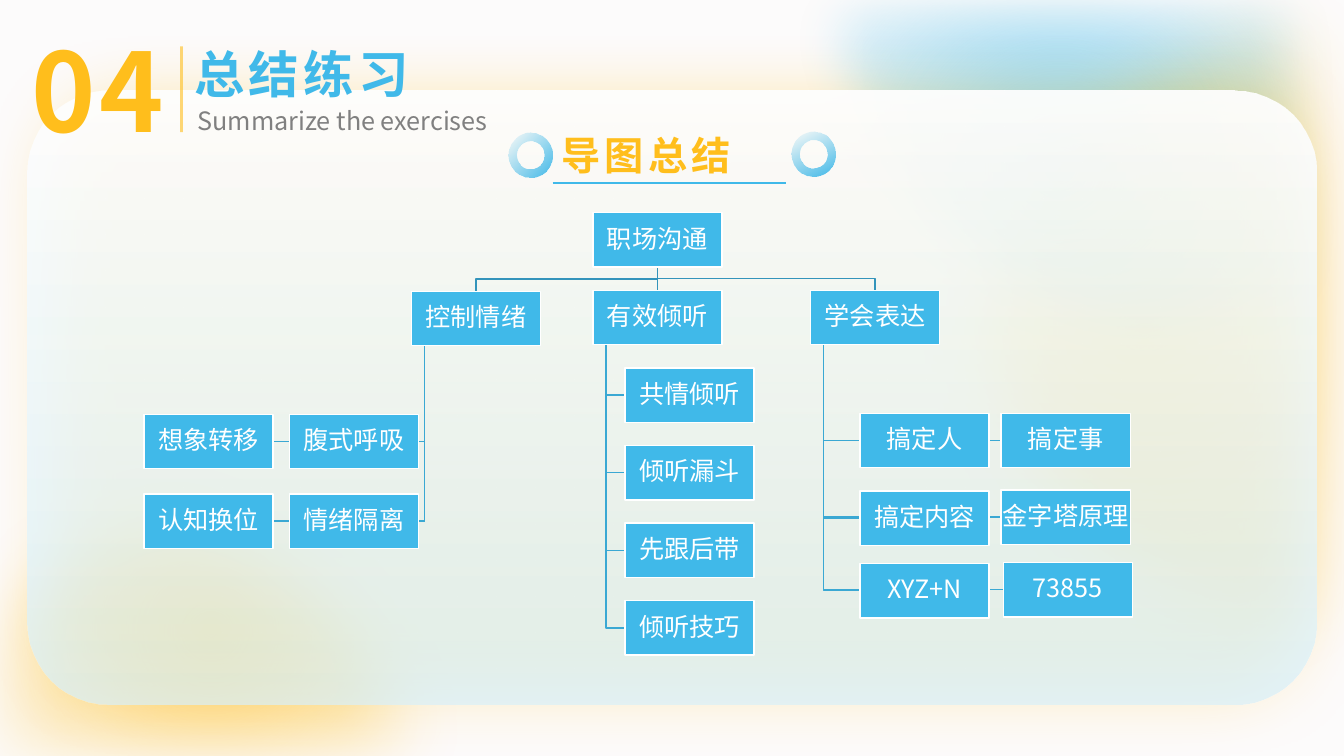
from dataclasses import dataclass
from math import cos, pi, sin
from typing import Optional

from lxml import etree
from pptx import Presentation
from pptx import util as u
from pptx.dml.color import RGBColor
from pptx.enum import shapes, text
from pptx.oxml import ns

FONT = "Noto Sans CJK SC"
COLORS = {
    "page": "FCFBFB", "yellow": "FFBE1C", "blue": "40B9E9", "white": "FFFFFF",
    "ice": "D9F1FB", "grey": "808080", "trunk": "3394BB", "branch": "3AA8D3",
}
BOX_WIDTH, BOX_HEIGHT = 1.28, 0.54
GLOW_CORNERS = 24


@dataclass
class Glow:
    """A soft ellipse cut off at the edges of a box."""
    center: tuple[float, float]
    radii: tuple[float, float]
    box: tuple[float, float, float, float]
    color: str
    softness: int


@dataclass
class Label:
    words: str
    box: tuple[float, float, float, float]
    size: int
    color: str
    bold: bool = False
    spacing: int = 0
    align: text.PP_ALIGN = text.PP_ALIGN.LEFT


@dataclass
class Node:
    words: str
    left: float
    top: float


@dataclass
class Branch:
    """A topic whose trunk line runs down to rows of boxes."""
    topic: Node
    trunk: float
    rows: list[list[Node]]


@dataclass
class Stop:
    position: int
    color: str
    alpha: int


ROOT = Node("职场沟通", 5.88, 2.11)
BRANCHES = [
    Branch(Node("控制情绪", 4.08, 2.89), 4.21, [
        [Node("腹式呼吸", 2.87, 4.11), Node("想象转移", 1.43, 4.11)],
        [Node("情绪隔离", 2.87, 4.9), Node("认知换位", 1.43, 4.9)],
    ]),
    Branch(Node("有效倾听", 5.88, 2.88), 6.01, [
        [Node(words, 6.2, 3.65 + 0.77 * row)]
        for row, words in enumerate(["共情倾听", "倾听漏斗", "先跟后带", "倾听技巧"])
    ]),
    Branch(Node("学会表达", 8.04, 2.88), 8.17, [
        [Node("搞定人", 8.53, 4.1), Node("搞定事", 9.93, 4.1)],
        [Node("搞定内容", 8.53, 4.87), Node("金字塔原理", 9.93, 4.86)],
        [Node("XYZ+N", 8.53, 5.59), Node("73855", 9.95, 5.58)],
    ]),
]
GLOWS = [
    Glow((1.68, 7.4), (3.2, 3.01), (-0.71, 4.39, 4.88, 8.14), "yellow", 50),
    Glow((12.69, 3.24), (3.76, 3.75), (8.93, -0.51, 13.78, 6.99), "yellow", 50),
    Glow((11.44, 0.09), (3.75, 3.66), (7.69, -0.41, 13.33, 3.75), "blue", 35),
]
LABELS = [
    Label("总结练习", (1.83, 0.38, 2.52, 0.71), 36, "blue", True, 3),
    Label("04", (0.08, 0.18, 1.78, 1.41), 78, "yellow", True, 3, text.PP_ALIGN.CENTER),
    Label("导图总结", (5.47, 1.25, 2.41, 0.57), 28, "yellow", True, 3),
    Label("Summarize the exercises", (1.86, 1, 3.27, 0.4), 18, "grey"),
]


def rgb(name: str) -> RGBColor:
    return RGBColor.from_string(COLORS[name])


def add_child(parent, tag: str, **attributes):
    child = etree.SubElement(parent, ns.qn(tag))
    for name, value in attributes.items():
        child.set(name, str(value))
    return child


def add_color(parent, name: str, alpha: int) -> None:
    color = add_child(parent, "a:srgbClr", val=COLORS[name])
    add_child(color, "a:alpha", val=alpha * 1000)


def fill_gradient(shape, stops: list[Stop], angle: Optional[int] = None) -> None:
    """Fill along an angle, or outward from the centre when there is none."""
    shape.fill.solid()
    properties = shape._element.spPr
    solid = properties.find(ns.qn("a:solidFill"))
    gradient = etree.Element(ns.qn("a:gradFill"), rotWithShape="1")
    stop_list = add_child(gradient, "a:gsLst")
    for stop in stops:
        add_color(add_child(stop_list, "a:gs", pos=stop.position * 1000), stop.color, stop.alpha)
    if angle is None:
        circle = add_child(gradient, "a:path", path="circle")
        add_child(circle, "a:fillToRect", l=50000, t=50000, r=50000, b=50000)
    else:
        add_child(gradient, "a:lin", ang=angle * 60000, scaled=0)
    properties.replace(solid, gradient)


def clear_effects(shape):
    shape.shadow.inherit = False
    return shape._element.spPr.find(ns.qn("a:effectLst"))


def add_outline(slide, points: list[tuple[float, float]], close: bool):
    corners = [(u.Inches(x), u.Inches(y)) for x, y in points]
    builder = slide.shapes.build_freeform(*corners[0])
    builder.add_line_segments(corners[1:], close=close)
    return builder.convert_to_shape()


def add_glow(slide, glow: Glow) -> None:
    left, top, right, bottom = glow.box
    angles = [2 * pi * step / GLOW_CORNERS for step in range(GLOW_CORNERS)]
    points = [
        (min(max(glow.center[0] + glow.radii[0] * cos(angle), left), right),
         min(max(glow.center[1] + glow.radii[1] * sin(angle), top), bottom))
        for angle in angles
    ]
    shape = add_outline(slide, points, True)
    shape.line.fill.background()
    fill_gradient(shape, [Stop(0, glow.color, 60), Stop(100, glow.color, 0)])
    add_child(clear_effects(shape), "a:softEdge", rad=u.Pt(glow.softness))


def add_panel(slide) -> None:
    panel = slide.shapes.add_shape(
        shapes.MSO_SHAPE.ROUNDED_RECTANGLE, *map(u.Inches, (0.27, 0.9, 12.79, 6.09)))
    panel.adjustments[0] = 0.134
    panel.line.fill.background()
    fill_gradient(panel, [Stop(0, "white", 95), Stop(100, "ice", 70)], 90)
    shadow = add_child(clear_effects(panel), "a:outerShdw", blurRad=u.Pt(50), dist=u.Pt(4),
                       dir=0, sx=97000, sy=97000, algn="ctr")
    add_color(shadow, "yellow", 40)


def write(frame, words: str, size: int, color: str, align: text.PP_ALIGN):
    frame.word_wrap = True
    frame.text = words
    paragraph = frame.paragraphs[0]
    paragraph.alignment = align
    font = paragraph.runs[0].font
    font.size, font.name, font.color.rgb = u.Pt(size), FONT, rgb(color)
    add_child(font._element, "a:ea", typeface=FONT)
    return paragraph


def add_label(slide, label: Label) -> None:
    frame = slide.shapes.add_textbox(*map(u.Inches, label.box)).text_frame
    font = write(frame, label.words, label.size, label.color, label.align).runs[0].font
    font.bold = label.bold
    font._element.set("spc", str(label.spacing * 100))


def add_node(slide, node: Node) -> None:
    shape = slide.shapes.add_shape(
        shapes.MSO_SHAPE.RECTANGLE, *map(u.Inches, (node.left, node.top, BOX_WIDTH, BOX_HEIGHT)))
    clear_effects(shape)
    shape.fill.solid()
    shape.fill.fore_color.rgb = rgb("blue")
    shape.line.color.rgb, shape.line.width = rgb("white"), u.Pt(1)
    frame = shape.text_frame
    frame.margin_left = frame.margin_right = frame.margin_top = frame.margin_bottom = u.Inches(0.01)
    frame.vertical_anchor = text.MSO_ANCHOR.MIDDLE
    write(frame, node.words, 18, "white", text.PP_ALIGN.CENTER).line_spacing = 0.9


def add_bent_line(slide, points: list[tuple[float, float]], color: str) -> None:
    shape = add_outline(slide, points, False)
    shape.fill.background()
    shape.line.color.rgb, shape.line.width = rgb(color), u.Pt(1)
    clear_effects(shape)


def add_rule(slide, ends: tuple[float, float, float, float], color: str, width: float):
    rule = slide.shapes.add_connector(shapes.MSO_CONNECTOR.STRAIGHT, *map(u.Inches, ends))
    rule.line.color.rgb, rule.line.width = rgb(color), u.Pt(width)
    add_child(rule._element.spPr, "a:effectLst")
    return rule


def add_tree(slide) -> None:
    root_x, root_bottom = ROOT.left + BOX_WIDTH / 2, ROOT.top + BOX_HEIGHT
    nodes = [node for branch in BRANCHES for row in branch.rows for node in row]
    for branch in BRANCHES:
        topic, trunk = branch.topic, branch.trunk
        topic_x, topic_bottom = topic.left + BOX_WIDTH / 2, topic.top + BOX_HEIGHT
        for node in [node for row in branch.rows for node in row]:
            end = node.left if node.left > trunk else node.left + BOX_WIDTH
            middle = node.top + BOX_HEIGHT / 2
            add_bent_line(slide, [(trunk, topic_bottom), (trunk, middle), (end, middle)], "branch")
        bend = (root_bottom + topic.top) / 2
        bends = [] if topic.left == ROOT.left else [(root_x, bend), (topic_x, bend)]
        add_bent_line(slide, [(root_x, root_bottom), *bends, (topic_x, topic.top)], "trunk")
    for node in [ROOT, *(branch.topic for branch in BRANCHES), *nodes]:
        add_node(slide, node)


def add_ring(slide, left: float, top: float, rotation: float) -> None:
    ring = slide.shapes.add_shape(shapes.MSO_SHAPE.DONUT, *map(u.Inches, (left, top, 0.44, 0.44)))
    ring.adjustments[0] = 0.194
    ring.rotation = rotation
    ring.line.fill.background()
    clear_effects(ring)
    fill_gradient(ring, [Stop(0, "blue", 0), Stop(100, "blue", 100)], 45)


def main() -> None:
    presentation = Presentation()
    presentation.slide_width, presentation.slide_height = u.Inches(13.33), u.Inches(7.5)
    slide = presentation.slides.add_slide(presentation.slide_layouts[6])
    slide.background.fill.solid()
    slide.background.fill.fore_color.rgb = rgb("page")
    for glow in GLOWS:
        add_glow(slide, glow)
    add_panel(slide)
    for label in LABELS:
        add_label(slide, label)
    add_tree(slide)
    divider = add_rule(slide, (1.8, 0.46, 1.8, 1.31), "yellow", 2)
    add_child(next(divider._element.iter(ns.qn("a:srgbClr"))), "a:alpha", val=60000)
    add_ring(slide, 5.04, 1.32, 0)
    add_ring(slide, 7.85, 1.31, 17.1)
    add_rule(slide, (5.48, 1.82, 7.8, 1.82), "blue", 1.5)
    presentation.save("out.pptx")


if __name__ == "__main__":
    main()
